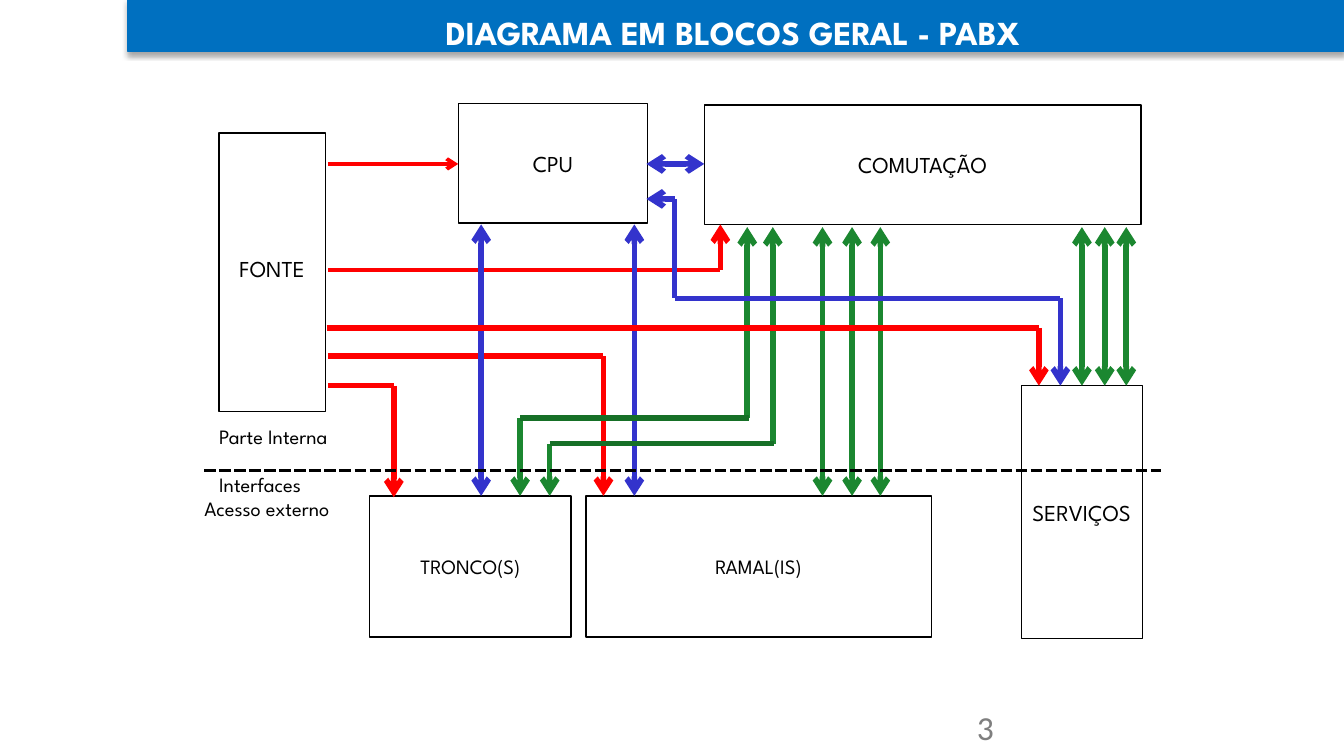
from itertools import pairwise

from lxml import etree
from pptx import Presentation
from pptx.dml.color import RGBColor
from pptx.enum.dml import MSO_LINE
from pptx.enum.shapes import MSO_CONNECTOR, MSO_SHAPE
from pptx.enum.text import MSO_ANCHOR, PP_ALIGN
from pptx.oxml.ns import qn
from pptx.util import Inches, Pt

BLACK = RGBColor(0x00, 0x00, 0x00)
WHITE = RGBColor(0xFF, 0xFF, 0xFF)
GRAY = RGBColor(0x7F, 0x7F, 0x7F)
BAND_BLUE = RGBColor(0x00, 0x70, 0xC0)
POWER_RED = RGBColor(0xFF, 0x00, 0x00)
CONTROL_BLUE = RGBColor(0x33, 0x33, 0xCC)
VOICE_GREEN = RGBColor(0x1B, 0x87, 0x30)
DARK_GREEN = RGBColor(0x16, 0x70, 0x27)


class Diagram:
    font = "League Spartan"

    def __init__(self, slide):
        self.shapes = slide.shapes

    def style(self, paragraph, size, color, font=None, bold=False):
        for run in paragraph.runs:
            run.font.name = font or self.font
            run.font.size = Pt(size)
            run.font.color.rgb = color
            run.font.bold = bold

    def rectangle(self, box, fill, border, kind=MSO_SHAPE.RECTANGLE):
        shape = self.shapes.add_shape(kind, *map(Inches, box))
        shape.shadow.inherit = False
        shape.fill.solid()
        shape.fill.fore_color.rgb = fill
        shape.line.color.rgb = border
        shape.line.width = Pt(0.75)
        return shape

    def band(self, box):
        """Title band with a soft shadow below it."""
        band = self.rectangle(box, BAND_BLUE, BAND_BLUE)
        effects = band._element.spPr.find(qn("a:effectLst"))
        shadow = etree.SubElement(
            effects, qn("a:outerShdw"), blurRad=str(Pt(3.1)),
            dist=str(Pt(1.8)), dir="5400000", algn="t", rotWithShape="0")
        color = etree.SubElement(shadow, qn("a:srgbClr"), val="000000")
        etree.SubElement(color, qn("a:alpha"), val="35000")

    def block(self, label, box, size=12.2, spacing=1.0):
        block = self.rectangle(box, WHITE, BLACK, MSO_SHAPE.ROUNDED_RECTANGLE)
        block.adjustments[0] = 0
        frame = block.text_frame
        frame.text = label
        frame.word_wrap = False
        frame.vertical_anchor = MSO_ANCHOR.MIDDLE
        frame.paragraphs[0].alignment = PP_ALIGN.CENTER
        frame.paragraphs[0].line_spacing = spacing
        self.style(frame.paragraphs[0], size, BLACK)

    def text(self, lines, box, size, color, font=None, bold=False,
             align=PP_ALIGN.LEFT, spacing=1.0, wrap=True, inset=0, indent=0):
        """Text box whose first line may be indented (inches)."""
        frame = self.shapes.add_textbox(*map(Inches, box)).text_frame
        frame.text = "\n".join(lines)
        frame.word_wrap = wrap
        frame.margin_left = frame.margin_right = Inches(inset)
        frame.margin_top = frame.margin_bottom = Inches(inset / 2)
        for paragraph in frame.paragraphs:
            paragraph.alignment = align
            paragraph.line_spacing = spacing
            self.style(paragraph, size, color, font, bold)
        if indent:
            properties = frame.paragraphs[0]._p.get_or_add_pPr()
            properties.set("marL", str(Inches(indent)))

    def line(self, start, end, color, width=3, head=False, tail=False):
        line = self.shapes.add_connector(
            MSO_CONNECTOR.STRAIGHT, *map(Inches, (*start, *end)))
        line.line.color.rgb = color
        line.line.width = Pt(width)
        outline = line.line._get_or_add_ln()
        for name, wanted in (("a:headEnd", head), ("a:tailEnd", tail)):
            if wanted:
                etree.SubElement(outline, qn(name), type="arrow")
        etree.SubElement(line._element.spPr, qn("a:effectLst"))
        return line

    def route(self, color, *points, head=False, tail=True):
        """Bent line through the points, with arrowheads at its ends."""
        segments = list(pairwise(points))
        for index, (start, end) in enumerate(segments):
            self.line(start, end, color, head=head and index == 0,
                      tail=tail and index == len(segments) - 1)


def main():
    deck = Presentation()
    deck.slide_width = Inches(10)
    deck.slide_height = deck.slide_width * 9 // 16
    diagram = Diagram(deck.slides.add_slide(deck.slide_layouts[6]))

    diagram.band((0.95, 0, 9.05, 0.38))
    diagram.text(["DIAGRAMA EM BLOCOS GERAL - PABX"], (2.16, 0.09, 6.59, 0.3),
                 18, WHITE, bold=True, align=PP_ALIGN.CENTER)

    diagram.block("RAMAL(IS)", (4.36, 3.69, 2.57, 1.05), 10.9)
    diagram.block("TRONCO(S)", (2.75, 3.69, 1.5, 1.05), 10.9)
    diagram.block("FONTE", (1.63, 0.99, 0.79, 2.07), spacing=0.7)
    diagram.block("COMUTAÇÃO", (5.24, 0.78, 3.25, 0.89))
    diagram.block("SERVIÇOS", (7.6, 2.87, 0.9, 1.88))
    diagram.block("CPU", (3.41, 0.77, 1.41, 0.89))

    # Power supply
    diagram.line((2.44, 1.22), (3.41, 1.22), POWER_RED, 2, tail=True)
    diagram.line((2.44, 2.01), (5.36, 2.01), POWER_RED, 2)
    diagram.line((5.36, 2.01), (5.36, 1.67), POWER_RED, tail=True)
    diagram.route(POWER_RED, (2.44, 2.87), (2.93, 2.87), (2.93, 3.7))
    diagram.route(POWER_RED, (2.44, 2.65), (4.49, 2.65), (4.49, 3.69))

    # Control
    for x in (3.58, 4.72):
        diagram.route(CONTROL_BLUE, (x, 1.67), (x, 3.69), head=True)
    diagram.route(CONTROL_BLUE, (4.81, 1.22), (5.24, 1.22), head=True)

    # Voice paths
    for trunk_x, switch_x, y in ((3.87, 5.56, 3.11), (4.09, 5.75, 3.3)):
        diagram.line((switch_x, 1.69), (switch_x, y), VOICE_GREEN, head=True)
        diagram.line((trunk_x, y), (trunk_x, 3.69), VOICE_GREEN, tail=True)
        diagram.line((trunk_x, y), (switch_x + 0.01, y), DARK_GREEN)
    for bottom, columns in ((3.69, (6.12, 6.34, 6.55)),
                            (2.87, (8.05, 8.22, 8.38))):
        for x in columns:
            diagram.route(VOICE_GREEN, (x, 1.69), (x, bottom), head=True)

    # Lines to the services block cross over the voice paths
    diagram.route(CONTROL_BLUE, (4.81, 1.48), (5.02, 1.48), (5.02, 2.22),
                  (7.89, 2.22), (7.89, 2.87), head=True)
    diagram.route(POWER_RED, (2.43, 2.44), (7.73, 2.44), (7.73, 2.87))

    boundary = diagram.line((1.52, 3.5), (8.64, 3.5), BLACK, 2)
    boundary.line.dash_style = MSO_LINE.SQUARE_DOT
    for lines, box in ((["Parte Interna"], (1.52, 3.17, 1, 0.17)),
                       (["Interfaces", "Acesso externo"],
                        (1.52, 3.53, 1.05, 0.35))):
        diagram.text(lines, box, 10.9, BLACK, spacing=0.95, wrap=False,
                     indent=0.11)

    diagram.text(["3"], (7.17, 5.21, 2.33, 0.3), 18, GRAY, font="Calibri",
                 inset=0.1)
    deck.save("out.pptx")


if __name__ == "__main__":
    main()
